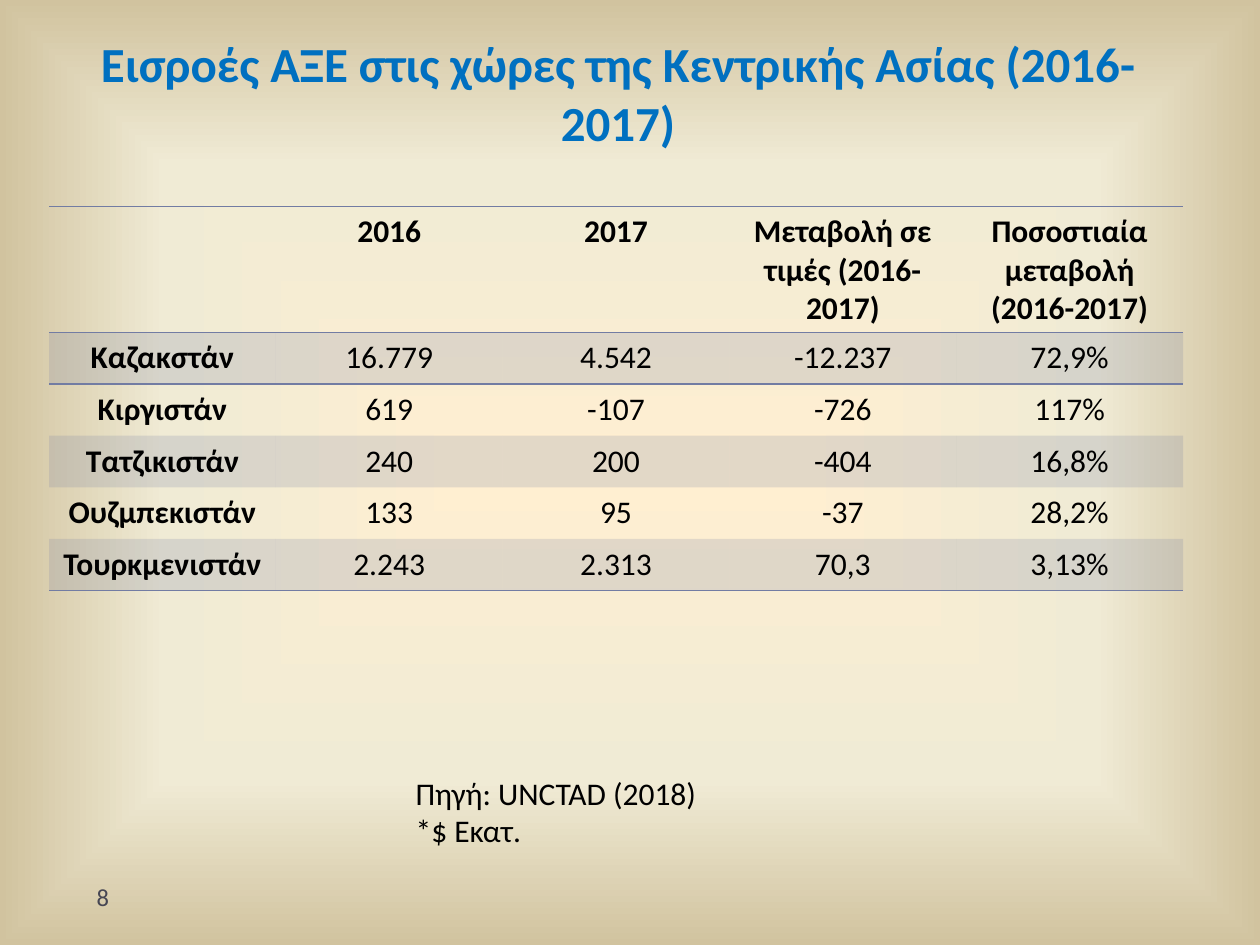
from pptx import Presentation
from pptx.dml.color import RGBColor
from pptx.enum import text
from pptx.oxml import parse_xml
from pptx.oxml import ns
from pptx.util import Pt

FONT = "Calibri"
TITLE_BLUE = RGBColor(0x00, 0x70, 0xC0)
BLACK = RGBColor(0x00, 0x00, 0x00)
SLATE = RGBColor(0x46, 0x46, 0x53)
ACCENT = RGBColor(0x72, 0x7C, 0xA3)
BACKGROUND_STOPS = (
    (0, RGBColor(0xFF, 0xEF, 0xD1)),
    (65, RGBColor(0xF0, 0xEB, 0xD5)),
    (100, RGBColor(0xD1, 0xC3, 0x9F)),
)
NO_TABLE_STYLE = "{2D5ABB26-0587-4C30-8999-92F81FD0307C}"
HEADER_HEIGHT = 60.5
INFLOWS = (
    ("", "2016", "2017", "Μεταβολή σε τιμές (2016-2017)", "Ποσοστιαία μεταβολή (2016-2017)"),
    ("Καζακστάν", "16.779", "4.542", "-12.237", "72,9%"),
    ("Κιργιστάν", "619", "-107", "-726", "117%"),
    ("Τατζικιστάν", "240", "200", "-404", "16,8%"),
    ("Ουζμπεκιστάν", "133", "95", "-37", "28,2%"),
    ("Τουρκμενιστάν", "2.243", "2.313", "70,3", "3,13%"),
)


def paint_background(slide):
    """Fill the slide with a gradient that spreads from its centre."""
    slide.background.fill.solid()
    stops = "".join(
        f'<a:gs pos="{position * 1000}"><a:srgbClr val="{color}"/></a:gs>'
        for position, color in BACKGROUND_STOPS
    )
    gradient = parse_xml(
        f'<a:gradFill {ns.nsdecls("a")} rotWithShape="1"><a:gsLst>{stops}</a:gsLst>'
        '<a:path path="shape"><a:fillToRect l="50000" t="50000" r="50000" b="50000"/>'
        "</a:path></a:gradFill>"
    )
    properties = slide.element.find(".//" + ns.qn("p:bgPr"))
    properties.replace(properties.find(ns.qn("a:solidFill")), gradient)


def format_text(text_frame, size, color, bold=False, align=text.PP_ALIGN.LEFT):
    """Give every paragraph and run of a text frame one look."""
    for paragraph in text_frame.paragraphs:
        paragraph.alignment = align
        for item in (paragraph, *paragraph.runs):
            item.font.name = FONT
            item.font.size = Pt(size)
            item.font.bold = bold
            item.font.color.rgb = color


def add_text(slide, box, wording, size, color, bold=False,
             align=text.PP_ALIGN.LEFT, anchor=text.MSO_ANCHOR.TOP):
    """Place a wrapped text box in the given box."""
    text_frame = slide.shapes.add_textbox(*map(Pt, box)).text_frame
    text_frame.word_wrap = True
    text_frame.vertical_anchor = anchor
    text_frame.text = wording
    format_text(text_frame, size, color, bold, align)


def style_cell(cell, shaded, edges):
    """Set the band fill and the ruled edges of a cell."""
    properties = cell._tc.get_or_add_tcPr()
    if shaded:
        cell.fill.solid()
        cell.fill.fore_color.rgb = ACCENT
        color = properties.find(".//" + ns.qn("a:srgbClr"))
        color.append(parse_xml(f'<a:alpha {ns.nsdecls("a")} val="20000"/>'))
    else:
        cell.fill.background()
    for index, edge in enumerate(edges):
        properties.insert(index, parse_xml(
            f'<a:{edge} {ns.nsdecls("a")} w="{Pt(1)}"><a:solidFill>'
            f'<a:srgbClr val="{ACCENT}"/></a:solidFill></a:{edge}>'
        ))


def add_inflow_table(slide, box):
    """Build the table of inflows by country in the given box."""
    height = box[3]
    last = len(INFLOWS) - 1
    frame = slide.shapes.add_table(len(INFLOWS), len(INFLOWS[0]), *map(Pt, box))
    frame.element.find(".//" + ns.qn("a:tableStyleId")).text = NO_TABLE_STYLE
    table = frame.table
    table.horz_banding = False
    edges = {0: ("lnT", "lnB"), 1: ("lnT",), last: ("lnB",)}
    for row_index, values in enumerate(INFLOWS):
        row_height = (height - HEADER_HEIGHT) / last if row_index else HEADER_HEIGHT
        table.rows[row_index].height = Pt(row_height)
        for column_index, value in enumerate(values):
            cell = table.cell(row_index, column_index)
            cell.text_frame.text = value
            bold = row_index == 0 or column_index == 0
            format_text(cell.text_frame, 18, BLACK, bold, text.PP_ALIGN.CENTER)
            style_cell(cell, row_index % 2 == 1, edges.get(row_index, ()))


def build_slide(presentation):
    """Add the slide on foreign direct investment inflows."""
    slide = presentation.slides.add_slide(presentation.slide_layouts[6])
    paint_background(slide)
    add_text(slide, (22.3, 12.2, 661.7, 77.8),
             "Εισροές ΑΞΕ στις χώρες της Κεντρικής Ασίας (2016-2017)",
             28, TITLE_BLUE, True, text.PP_ALIGN.CENTER, text.MSO_ANCHOR.BOTTOM)
    add_inflow_table(slide, (28, 118, 648, 208))
    add_text(slide, (48.2, 500.4, 156.2, 28.8), "8", 14, SLATE)
    add_text(slide, (230.4, 438.5, 320.4, 51), "Πηγή: UNCTAD (2018)\n*$ Εκατ.", 18, BLACK)


def main():
    """Create and save the presentation."""
    presentation = Presentation()
    presentation.slide_width = Pt(720)
    presentation.slide_height = Pt(540)
    build_slide(presentation)
    presentation.save("out.pptx")


if __name__ == "__main__":
    main()
